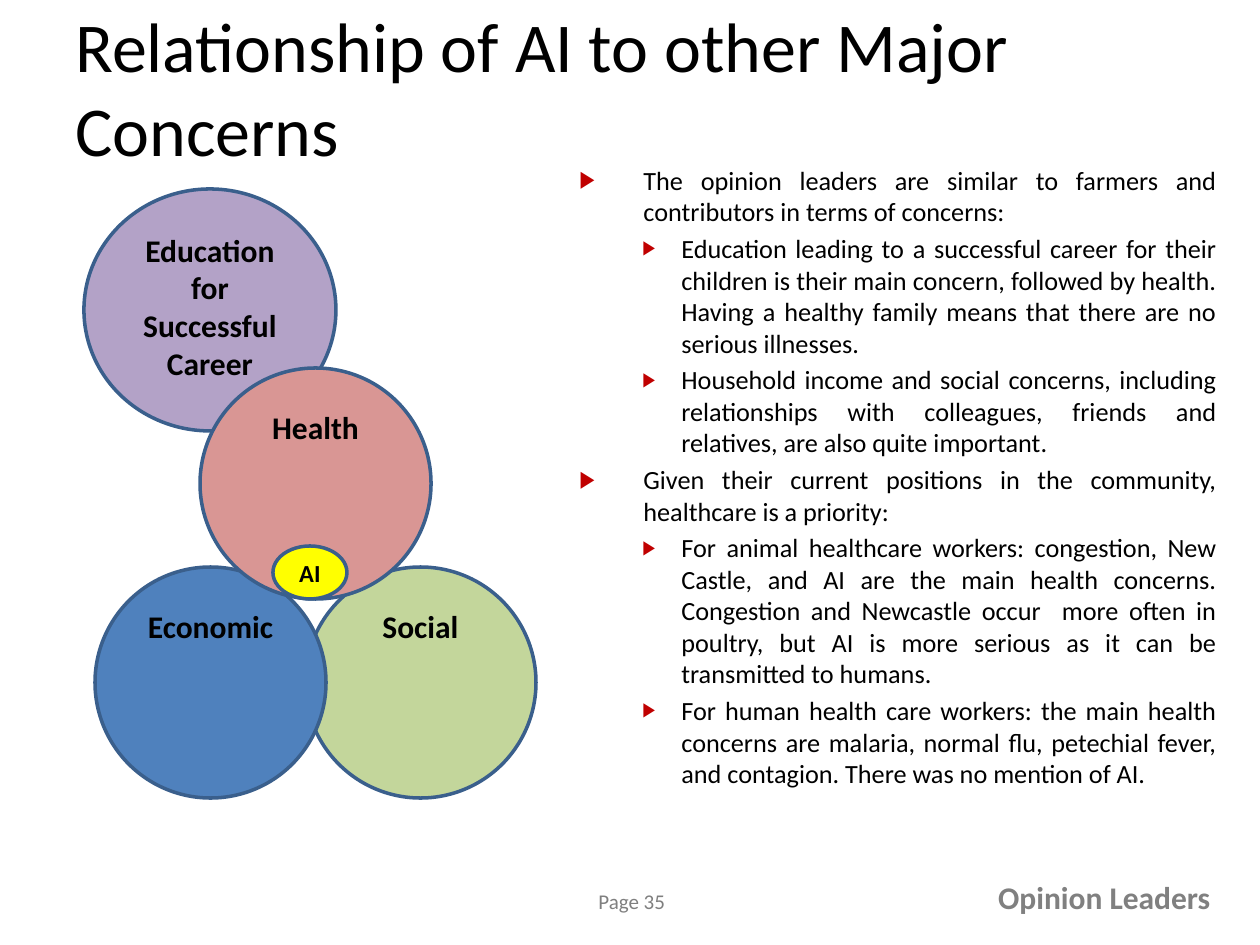
from lxml import etree
from pptx import Presentation
from pptx.dml.color import RGBColor
from pptx.enum.shapes import MSO_SHAPE
from pptx.enum.text import MSO_ANCHOR, PP_ALIGN
from pptx.oxml.ns import qn
from pptx.util import Emu, Pt

ELLIPSE = MSO_SHAPE.OVAL
TOP, MIDDLE = MSO_ANCHOR.TOP, MSO_ANCHOR.MIDDLE
LEFT, CENTER = PP_ALIGN.LEFT, PP_ALIGN.CENTER
RIGHT, JUSTIFY = PP_ALIGN.RIGHT, PP_ALIGN.JUSTIFY

BLACK = RGBColor(0x00, 0x00, 0x00)
PAGE_GRAY = RGBColor(0x7F, 0x7F, 0x7F)
FOOTER_GRAY = RGBColor(0x80, 0x80, 0x80)
OUTLINE_BLUE = RGBColor(0x3A, 0x5F, 0x8C)
GREEN = RGBColor(0xC3, 0xD6, 0x9B)
PURPLE = RGBColor(0xB3, 0xA2, 0xC7)
BLUE = RGBColor(0x4F, 0x81, 0xBD)
PINK = RGBColor(0xD9, 0x96, 0x94)
YELLOW = RGBColor(0xFF, 0xFF, 0x00)
BULLET_RED = RGBColor(0xC0, 0x00, 0x00)

FONT = "Calibri"
EMU_PER_PX = 914400 / 126


def px(*lengths):
    return [Emu(round(length * EMU_PER_PX)) for length in lengths]


def write(shape, lines, size, color, bold, align, anchor, wrap=True):
    frame = shape.text_frame
    frame.word_wrap = wrap
    frame.vertical_anchor = anchor
    for index, line in enumerate(lines):
        paragraph = frame.add_paragraph() if index else frame.paragraphs[0]
        paragraph.alignment = align
        run = paragraph.add_run()
        run.text = line
        run.font.name = FONT
        run.font.size = Pt(size)
        run.font.bold = bold
        run.font.color.rgb = color
    return frame.paragraphs


presentation = Presentation()
presentation.slide_width, presentation.slide_height = px(1260, 945)
slide = presentation.slides.add_slide(presentation.slide_layouts[6])

page_number = slide.shapes.add_textbox(*px(586, 882, 97, 38))
write(page_number, ["Page 35"], 12, PAGE_GRAY, False, LEFT, TOP, False)

title = slide.shapes.add_textbox(*px(63, 38, 1166, 98))
write(title, ["Relationship of AI to other Major Concerns"], 40, BLACK, False, LEFT, MIDDLE)

footer = slide.shapes.add_textbox(*px(984, 872, 239, 50))
write(footer, ["Opinion Leaders"], 18, FOOTER_GRAY, True, RIGHT, TOP, False)

findings = [
    (0, "The opinion leaders are similar to farmers and contributors in terms of concerns:"),
    (1, "Education leading to a successful career for their children is their main concern, "
        "followed by health. Having a healthy family means that there are no serious illnesses."),
    (1, "Household income and social concerns, including relationships with colleagues, "
        "friends and relatives, are also quite important."),
    (0, "Given their current positions in the community, healthcare is a priority:"),
    (1, "For animal healthcare workers: congestion, New Castle, and AI are the main health "
        "concerns. Congestion and Newcastle occur  more often in poultry, but AI is more "
        "serious as it can be transmitted to humans."),
    (1, "For human health care workers: the main health concerns are malaria, normal flu, "
        "petechial fever, and contagion. There was no mention of AI."),
]
level_styles = [(64, 64, 90), (102, 39, 75)]

body = slide.shapes.add_textbox(*px(567, 158, 662, 746))
paragraphs = write(body, [text for level, text in findings], 15, BLACK, False, JUSTIFY, TOP)
for paragraph, (level, text) in zip(paragraphs, findings):
    margin, hanging, bullet_percent = level_styles[level]
    paragraph.level = level
    paragraph.space_before = Pt(3)
    properties = paragraph._p.get_or_add_pPr()
    margin_emu, indent_emu = px(margin, -hanging)
    properties.set("marL", str(margin_emu))
    properties.set("indent", str(indent_emu))
    bullet_color = etree.SubElement(properties, qn("a:buClr"))
    etree.SubElement(bullet_color, qn("a:srgbClr"), val=str(BULLET_RED))
    etree.SubElement(properties, qn("a:buSzPct"), val=str(bullet_percent * 1000))
    etree.SubElement(properties, qn("a:buFont"), typeface=FONT)
    etree.SubElement(properties, qn("a:buChar"), char="▶")

concerns = [
    (["Social"], (305, 567, 231, 231), GREEN, 18, TOP),
    (["Education for Successful", "Career"], (84, 189, 252, 242), PURPLE, 18, TOP),
    (["Economic"], (95, 567, 231, 231), BLUE, 18, TOP),
    (["Health"], (200, 368, 231, 231), PINK, 18, TOP),
    (["AI"], (273, 546, 74, 53), YELLOW, 14, MIDDLE),
]
for lines, box, fill_color, size, anchor in concerns:
    circle = slide.shapes.add_shape(ELLIPSE, *px(*box))
    circle.shadow.inherit = False
    circle.fill.solid()
    circle.fill.fore_color.rgb = fill_color
    circle.line.color.rgb = OUTLINE_BLUE
    circle.line.width = Pt(2)
    write(circle, lines, size, BLACK, True, CENTER, anchor)

presentation.save("out.pptx")
